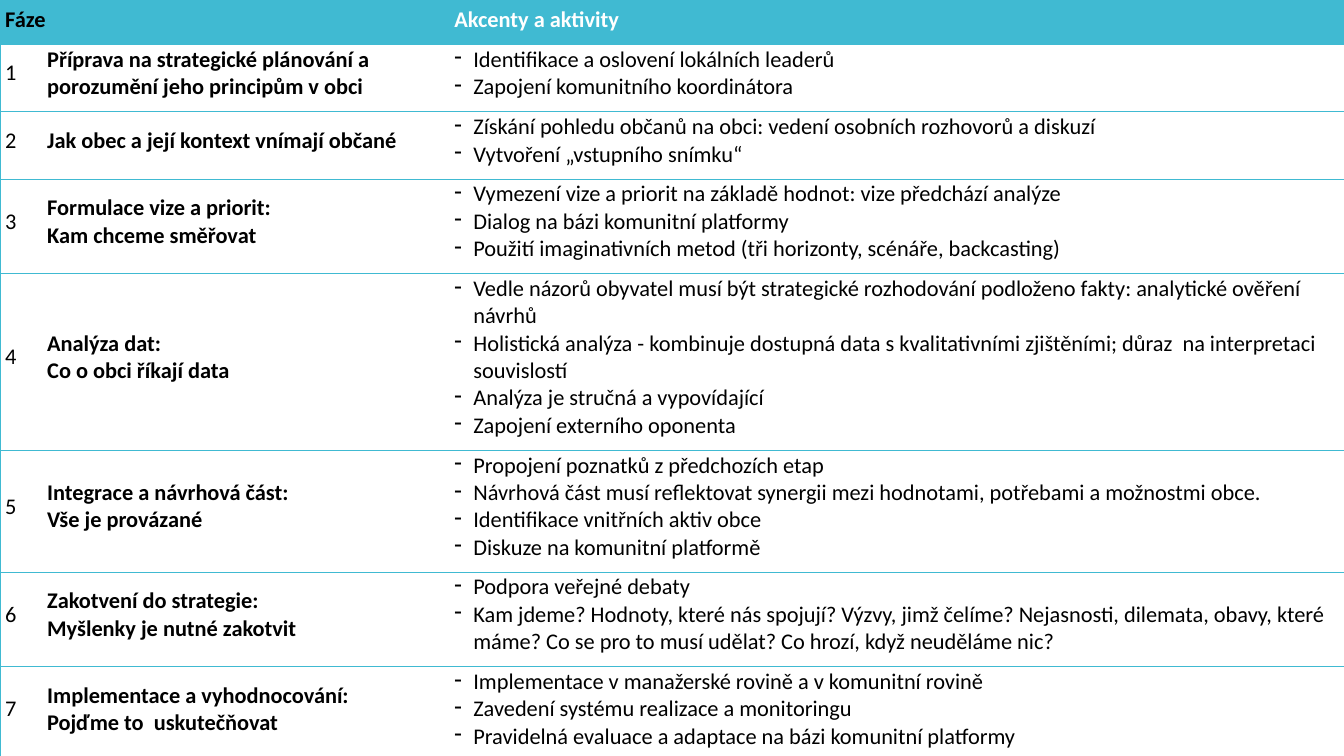
from dataclasses import dataclass

from lxml.etree import SubElement as Sub
from pptx import Presentation
from pptx.dml.color import RGBColor as Rgb
from pptx.enum.text import MSO_ANCHOR as Anchor
from pptx.oxml import parse_xml
from pptx.oxml.ns import nsdecls, qn
from pptx.table import _Cell as Cell
from pptx.util import Cm, Pt

HUES = {"teal": "40BAD2", "white": "FFFFFF", "black": "000000"}
FONT, SIZE = "Calibri", Pt(16)
WIDTH, HEIGHT = 33.87, 19.05
COLS = (1.06, 10.26, 22.55)
HEAD = 1.12  # height of the header row


@dataclass
class Phase:
    height: float
    title: str
    acts: tuple[str, ...]


PHASES = (
    Phase(1.7, "Příprava na strategické plánování a porozumění jeho principům v obci", (
        "Identifikace a oslovení lokálních leaderů",
        "Zapojení komunitního koordinátora")),
    Phase(1.7, "Jak obec a její kontext vnímají občané", (
        "Získání pohledu občanů na obci: vedení osobních rozhovorů a diskuzí",
        "Vytvoření „vstupního snímku“")),
    Phase(2.36, "Formulace vize a priorit:\nKam chceme směřovat", (
        "Vymezení vize a priorit na základě hodnot: vize předchází analýze",
        "Dialog na bázi komunitní platformy",
        "Použití imaginativních metod (tři horizonty, scénáře, backcasting)")),
    Phase(4.4, "Analýza dat:\nCo o obci říkají data", (
        "Vedle názorů obyvatel musí být strategické rozhodování podloženo fakty: "
        "analytické ověření návrhů",
        "Holistická analýza - kombinuje dostupná data s kvalitativními zjištěními; "
        "důraz  na interpretaci souvislostí",
        "Analýza je stručná a vypovídající",
        "Zapojení externího oponenta")),
    Phase(3.05, "Integrace a návrhová část:\nVše je provázané", (
        "Propojení poznatků z předchozích etap",
        "Návrhová část musí reflektovat synergii mezi hodnotami, potřebami "
        "a možnostmi obce.",
        "Identifikace vnitřních aktiv obce",
        "Diskuze na komunitní platformě")),
    Phase(2.36, "Zakotvení do strategie:\nMyšlenky je nutné zakotvit", (
        "Podpora veřejné debaty",
        "Kam jdeme? Hodnoty, které nás spojují? Výzvy, jimž čelíme? Nejasnosti, "
        "dilemata, obavy, které máme? Co se pro to musí udělat? Co hrozí, "
        "když neuděláme nic?")),
    Phase(2.36, "Implementace a vyhodnocování:\nPojďme to  uskutečňovat", (
        "Implementace v manažerské rovině a v komunitní rovině",
        "Zavedení systému realizace a monitoringu",
        "Pravidelná evaluace a adaptace na bázi komunitní platformy")),
)


def edge(cell: Cell, sides: str) -> None:
    """Draw teal borders on the given sides and clear the others."""
    props = cell._tc.get_or_add_tcPr()
    for spot, side in enumerate("LRTB"):
        line = parse_xml(f'<a:ln{side} {nsdecls("a")} w="9525"/>')
        if side in sides:
            fill = Sub(line, qn("a:solidFill"))
            Sub(fill, qn("a:srgbClr"), val=HUES["teal"])
        else:
            Sub(line, qn("a:noFill"))
        props.insert(spot, line)


def write(cell: Cell, text: str, bold: bool = False, hue: str = "black",
          dash: bool = False) -> None:
    """Fill a cell with text, one paragraph a line."""
    cell.text_frame.text = text
    for para in cell.text_frame.paragraphs:
        if dash:
            props = para._p.get_or_add_pPr()
            props.set("marL", str(Cm(0.48)))
            props.set("indent", str(-Cm(0.48)))
            Sub(props, qn("a:buChar"), char="-")
        for run in para.runs:
            font = run.font
            font.name, font.size, font.bold = FONT, SIZE, bold
            font.color.rgb = Rgb.from_string(HUES[hue])


def style(cell: Cell, fill: str, anchor: Anchor, right: float, sides: str) -> None:
    """Set the fill, margins and borders of a cell."""
    cell.fill.solid()
    cell.fill.fore_color.rgb = Rgb.from_string(HUES[fill])
    cell.vertical_anchor = anchor
    cell.margin_left, cell.margin_right = Cm(0.13), Cm(right)
    cell.margin_top, cell.margin_bottom = Cm(0.03), Cm(0.28)
    edge(cell, sides)


def main() -> None:
    deck = Presentation()
    deck.slide_width, deck.slide_height = Cm(WIDTH), Cm(HEIGHT)
    slide = deck.slides.add_slide(deck.slide_layouts[6])

    # Table grid
    grid = slide.shapes.add_table(len(PHASES) + 1, len(COLS), 0, 0,
                                  Cm(WIDTH), Cm(HEIGHT)).table
    grid.horz_banding = False
    for col, width in zip(grid.columns, COLS):
        col.width = Cm(width)
    for row, height in zip(grid.rows, (HEAD, *(p.height for p in PHASES))):
        row.height = Cm(height)

    # Header
    for col, sides in enumerate(("LTB", "TB", "RTB")):
        style(grid.cell(0, col), "teal", Anchor.BOTTOM, 0.18, sides)
    grid.cell(0, 0).merge(grid.cell(0, 1))
    write(grid.cell(0, 0), "Fáze", bold=True)
    write(grid.cell(0, 2), "Akcenty a aktivity", bold=True, hue="white")

    # Phases
    for row, phase in enumerate(PHASES, 1):
        num, name, acts = (grid.cell(row, col) for col in range(3))
        style(num, "white", Anchor.MIDDLE, 0.13, "LTB")
        style(name, "white", Anchor.MIDDLE, 0.13, "TB")
        style(acts, "white", Anchor.MIDDLE, 0.08, "RTB")
        write(num, str(row))
        write(name, phase.title, bold=True)
        write(acts, "\n".join(phase.acts), dash=True)

    deck.save("out.pptx")


if __name__ == "__main__":
    main()
